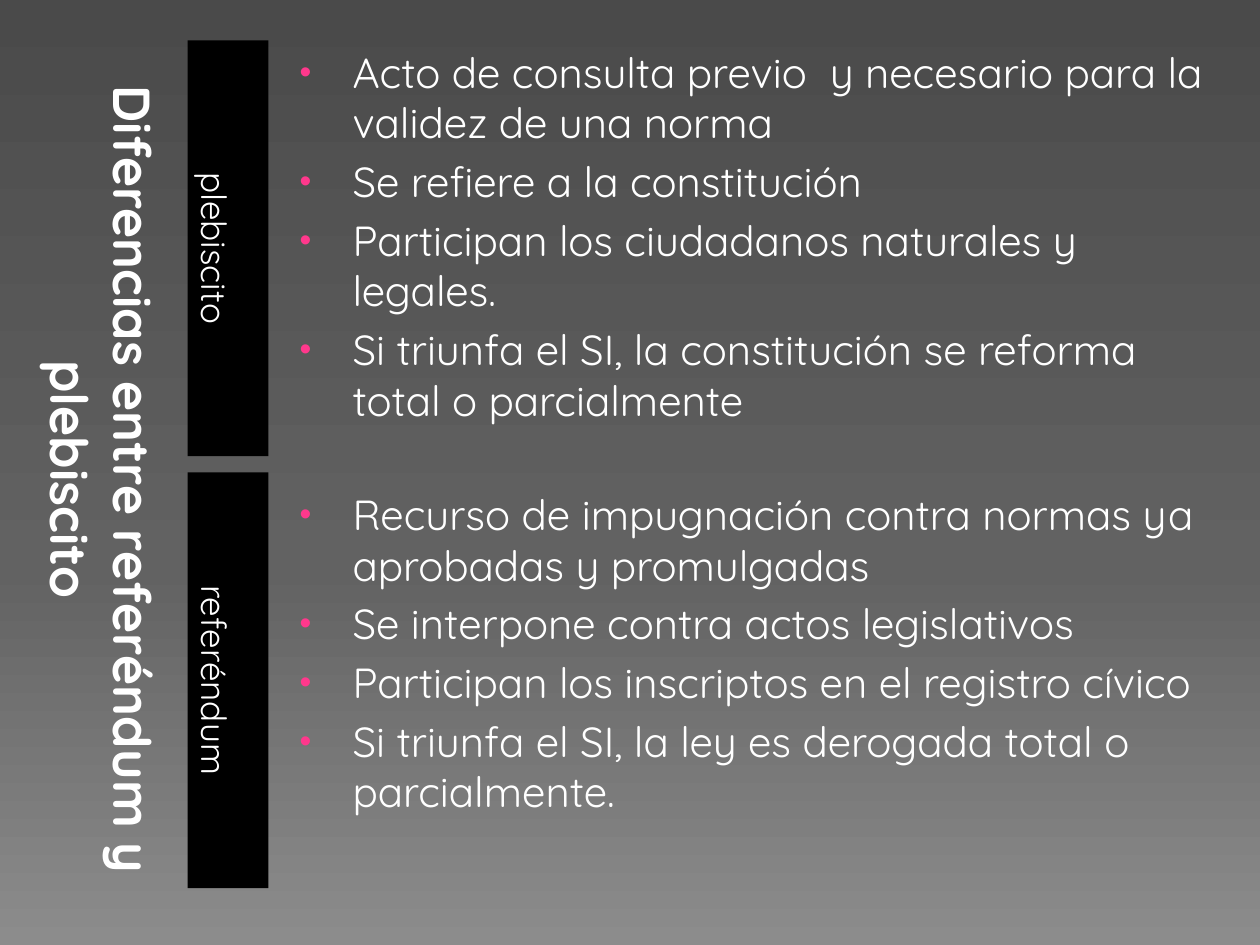
from lxml.etree import SubElement
from pptx import Presentation
from pptx.dml.color import RGBColor
from pptx.enum.shapes import MSO_SHAPE as Shape
from pptx.enum.text import MSO_ANCHOR as Anchor, PP_ALIGN as Align
from pptx.oxml.ns import qn
from pptx.util import Inches, Pt

WHITE = RGBColor(0xFF, 0xFF, 0xFF)
BLACK = RGBColor(0, 0, 0)
PINK = RGBColor(0xFF, 0x38, 0x8C)
SHADES = [(0, RGBColor(0x4A, 0x4A, 0x4A)),
          (60, RGBColor(0x62, 0x62, 0x62)),
          (100, RGBColor(0x8C, 0x8C, 0x8C))]
FONT = "Quicksand"

# Shared edges of the layout, in inches
TOP, TALL = 0.32, 6.73
GAP = 0.13
HALF = (TALL - GAP) / 2

TITLE = "Diferencias entre referéndum y plebiscito"
PARTS = [
    ("plebiscito", TOP, [
        "Acto de consulta previo  y necesario para la validez de una norma",
        "Se refiere a la constitución",
        "Participan los ciudadanos naturales y legales.",
        "Si triunfa el SI, la constitución se reforma total o parcialmente",
    ]),
    ("referéndum", TOP + 0.08, [
        "Recurso de impugnación contra normas ya aprobadas y promulgadas",
        "Se interpone contra actos legislativos",
        "Participan los inscriptos en el registro cívico",
        "Si triunfa el SI, la ley es derogada total o parcialmente.",
    ]),
]


def set_all(thing, values):
    for name, value in values.items():
        setattr(thing, name, value)


def paint(slide):
    """Fill the background with a top-down gradient."""
    slide.background.fill.gradient()
    grad = slide.background.fill._fill._gradFill
    for child in list(grad):
        grad.remove(child)
    stops = SubElement(grad, qn("a:gsLst"))
    for share, color in SHADES:
        stop = SubElement(stops, qn("a:gs"), pos=str(share * 1000))
        SubElement(stop, qn("a:srgbClr"), val=str(color))
    SubElement(grad, qn("a:lin"), ang="5400000", scaled="0")


def write(para, text, size, bold=False):
    run = para.add_run()
    run.text = text
    set_all(run.font, {"name": FONT, "size": Pt(size), "bold": bold})
    run.font.color.rgb = WHITE


def turn(shape, text, size, bold=False, inset=0.05):
    """Write centred text that reads downwards."""
    frame = shape.text_frame
    set_all(frame, {"word_wrap": True, "vertical_anchor": Anchor.BOTTOM,
                    "margin_left": Inches(0.05), "margin_right": Inches(0.05),
                    "margin_top": Inches(inset), "margin_bottom": Inches(0.05)})
    frame._txBody.bodyPr.set("vert", "vert")
    para = frame.paragraphs[0]
    para.alignment = Align.CENTER
    write(para, text, size, bold)


def add_title(slide, box):
    shape = slide.shapes.add_textbox(*map(Inches, box))
    turn(shape, TITLE, 29.7, True, 0.34)


def add_label(slide, box, text):
    shape = slide.shapes.add_shape(Shape.RECTANGLE, *map(Inches, box))
    shape.shadow.inherit = False
    shape.fill.solid()
    shape.fill.fore_color.rgb = BLACK
    shape.line.fill.background()
    turn(shape, text, 20)


def add_list(slide, box, items):
    frame = slide.shapes.add_textbox(*map(Inches, box)).text_frame
    frame.word_wrap = True
    for i, item in enumerate(items):
        para = frame.add_paragraph() if i else frame.paragraphs[0]
        props = para._p.get_or_add_pPr()
        props.set("marL", str(Inches(0.49)))
        props.set("indent", str(Inches(-0.42)))
        # Space before, as a share of the line
        space = SubElement(props, qn("a:spcBef"))
        SubElement(space, qn("a:spcPct"), val="20000")
        # Pink bullet
        color = SubElement(props, qn("a:buClr"))
        SubElement(color, qn("a:srgbClr"), val=str(PINK))
        SubElement(props, qn("a:buSzPct"), val="80000")
        SubElement(props, qn("a:buFont"), typeface="Arial")
        SubElement(props, qn("a:buChar"), char="•")
        write(para, item, 24)


def main():
    deck = Presentation()
    set_all(deck, {"slide_width": Inches(10), "slide_height": Inches(7.5)})
    slide = deck.slides.add_slide(deck.slide_layouts[6])
    paint(slide)
    add_title(slide, (0.27, TOP, 1.17, TALL))
    for row, (name, top, items) in enumerate(PARTS):
        down = row * (HALF + GAP)
        add_label(slide, (1.49, TOP + down, 0.64, HALF), name)
        add_list(slide, (2.21, top + down, 7.5, 3.2), items)
    deck.save("out.pptx")


if __name__ == "__main__":
    main()
